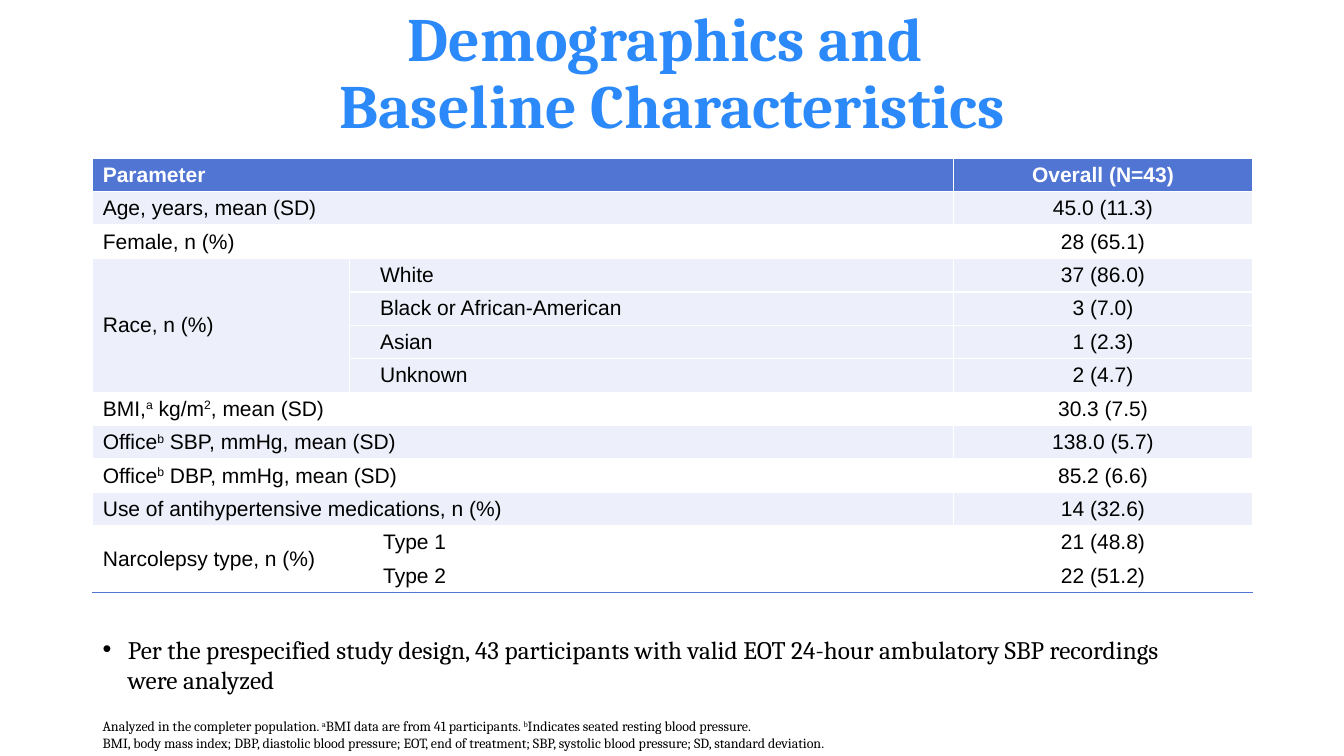
from dataclasses import dataclass

from lxml.etree import SubElement
from pptx import Presentation
from pptx.dml.color import RGBColor
from pptx.enum.text import MSO_ANCHOR, MSO_AUTO_SIZE, PP_ALIGN
from pptx.oxml.ns import qn
from pptx.util import Inches, Pt


@dataclass(frozen=True)
class Theme:
    title_blue: str = "2B89F9"
    table_blue: str = "5075D3"
    white: str = "FFFFFF"
    black: str = "000000"
    text_font: str = "Cambria"
    table_font: str = "Arial"
    title_size: float = 44
    body_size: float = 18
    table_size: float = 15
    note_size: float = 10
    band_opacity: int = 10


TITLE_LINES = ["Demographics and ", "Baseline Characteristics"]
HEADER = ("Parameter", "Overall (N=43)")
# Each group: label, indent of its levels, and (level, value) rows.
# Text between carets is superscript.
GROUPS = [
    ("Age, years, mean (SD)", 0, [("", "45.0 (11.3)")]),
    ("Female, n (%)", 0, [("", "28 (65.1)")]),
    ("Race, n (%)", 0.2, [
        ("White", "37 (86.0)"),
        ("Black or African-American", "3 (7.0)"),
        ("Asian", "1 (2.3)"),
        ("Unknown", "2 (4.7)"),
    ]),
    ("BMI,^a^ kg/m^2^, mean (SD)", 0, [("", "30.3 (7.5)")]),
    ("Office^b^ SBP, mmHg, mean (SD)", 0, [("", "138.0 (5.7)")]),
    ("Office^b^ DBP, mmHg, mean (SD)", 0, [("", "85.2 (6.6)")]),
    ("Use of antihypertensive medications, n (%)", 0, [("", "14 (32.6)")]),
    ("Narcolepsy type, n (%)", 0.23, [("Type 1", "21 (48.8)"), ("Type 2", "22 (51.2)")]),
]
FINDING = ("Per the prespecified study design, 43 participants with valid EOT 24-hour "
           "ambulatory SBP recordings were analyzed")
FOOTNOTES = [
    "Analyzed in the completer population. ^a^BMI data are from 41 participants. "
    "^b^Indicates seated resting blood pressure.",
    "BMI, body mass index; DBP, diastolic blood pressure; EOT, end of treatment; "
    "SBP, systolic blood pressure; SD, standard deviation.",
]
LEFT, WIDTH = 0.92, 11.5
COLUMN_WIDTHS = (2.55, 5.99, 2.96)
TABLE_TOP, TABLE_HEIGHT = 1.57, 4.31


class SlideBuilder:
    def __init__(self, presentation, theme):
        self.theme = theme
        self.slide = presentation.slides.add_slide(presentation.slide_layouts[5])

    def add_runs(self, paragraph, text, size, color, font, bold=False):
        """Add text run by run, raising the parts between carets."""
        for index, part in enumerate(text.split("^")):
            if not part:
                continue
            run = paragraph.add_run()
            run.text = part
            run.font.size = Pt(size)
            run.font.name = font
            run.font.bold = bold
            run.font.color.rgb = RGBColor.from_string(color)
            if index % 2:
                run._r.get_or_add_rPr().set("baseline", "30000")

    def indent(self, paragraph, left, first_line=0):
        properties = paragraph._p.get_or_add_pPr()
        properties.set("marL", str(Inches(left)))
        properties.set("indent", str(Inches(first_line)))
        return properties

    def title(self, lines, left, top, width, height):
        shape = self.slide.shapes.title
        shape.left, shape.top = Inches(left), Inches(top)
        shape.width, shape.height = Inches(width), Inches(height)
        shape.text_frame.vertical_anchor = MSO_ANCHOR.MIDDLE
        shape.text_frame.auto_size = MSO_AUTO_SIZE.NONE
        paragraph = shape.text_frame.paragraphs[0]
        paragraph.alignment = PP_ALIGN.CENTER
        paragraph.line_spacing = 0.9
        for index, line in enumerate(lines):
            if index:
                paragraph.add_line_break()
            self.add_runs(paragraph, line, self.theme.title_size, self.theme.title_blue,
                          self.theme.text_font, bold=True)

    def text(self, lines, left, top, width, height, size, bullet=False):
        shape = self.slide.shapes.add_textbox(
            Inches(left), Inches(top), Inches(width), Inches(height))
        frame = shape.text_frame
        frame.word_wrap = True
        frame.auto_size = MSO_AUTO_SIZE.SHAPE_TO_FIT_TEXT
        frame.vertical_anchor = MSO_ANCHOR.BOTTOM
        for index, line in enumerate(lines):
            paragraph = frame.add_paragraph() if index else frame.paragraphs[0]
            if bullet:
                properties = self.indent(paragraph, 0.25, -0.25)
                SubElement(properties, qn("a:buFont"), typeface=self.theme.table_font)
                SubElement(properties, qn("a:buChar"), char="•")
            self.add_runs(paragraph, line, size, self.theme.black, self.theme.text_font)

    def style_cell(self, cell, fill, opacity=100, last=False):
        """Set margins, borders and fill; the last row is closed by a thin blue rule."""
        cell.vertical_anchor = MSO_ANCHOR.MIDDLE
        cell.margin_top = cell.margin_bottom = Inches(0.04)
        properties = cell._tc.get_or_add_tcPr()
        for side in "LRTB":
            closing = last and side == "B"
            line = SubElement(properties, qn(f"a:ln{side}"), w=str(Pt(0.5 if closing else 1)))
            color = self.theme.table_blue if closing else self.theme.white
            SubElement(SubElement(line, qn("a:solidFill")), qn("a:srgbClr"), val=color)
        cell.fill.solid()
        cell.fill.fore_color.rgb = RGBColor.from_string(fill)
        if opacity < 100:
            color_element = properties.find(qn("a:solidFill")).find(qn("a:srgbClr"))
            SubElement(color_element, qn("a:alpha"), val=str(opacity * 1000))

    def cell_text(self, cell, text, header=False, centred=False, left=0):
        paragraph = cell.text_frame.paragraphs[0]
        if centred:
            paragraph.alignment = PP_ALIGN.CENTER
        if left:
            self.indent(paragraph, left)
        self.add_runs(paragraph, text, self.theme.table_size,
                      self.theme.white if header else self.theme.black,
                      self.theme.table_font, bold=header)

    def table(self, header, groups, left, top, column_widths, height):
        row_count = 1 + sum(len(levels) for _, _, levels in groups)
        table = self.slide.shapes.add_table(
            row_count, len(column_widths), Inches(left), Inches(top),
            Inches(sum(column_widths)), Inches(height)).table
        table.horz_banding = False
        for column, width in zip(table.columns, column_widths):
            column.width = Inches(width)
        for row in table.rows:
            row.height = Inches(height / row_count)

        for cell in table.rows[0].cells:
            self.style_cell(cell, self.theme.table_blue)
        table.cell(0, 0).merge(table.cell(0, 1))
        self.cell_text(table.cell(0, 0), header[0], header=True)
        self.cell_text(table.cell(0, 2), header[1], header=True, centred=True)

        start = 1
        for index, (label, level_indent, levels) in enumerate(groups):
            shaded = index % 2 == 0
            fill = self.theme.table_blue if shaded else self.theme.white
            opacity = self.theme.band_opacity if shaded else 100
            end = start + len(levels) - 1
            for row, (level, value) in enumerate(levels, start):
                for cell in table.rows[row].cells:
                    self.style_cell(cell, fill, opacity, last=end == row_count - 1 == row)
                if level:
                    self.cell_text(table.cell(row, 1), level, left=level_indent)
                self.cell_text(table.cell(row, 2), value, centred=True)
            closing = end == row_count - 1
            if closing:
                rule = table.cell(start, 0)._tc.tcPr.find(qn("a:lnB"))
                rule.set("w", str(Pt(0.5)))
                rule.find(qn("a:solidFill"))[0].set("val", self.theme.table_blue)
            table.cell(start, 0).merge(table.cell(end, 0 if len(levels) > 1 else 1))
            self.cell_text(table.cell(start, 0), label)
            start = end + 1


def main():
    presentation = Presentation()
    presentation.slide_width = Inches(13.33)
    presentation.slide_height = Inches(7.5)
    theme = Theme()
    builder = SlideBuilder(presentation, theme)
    builder.title(TITLE_LINES, LEFT, 0.02, WIDTH, 1.45)
    builder.table(HEADER, GROUPS, LEFT, TABLE_TOP, COLUMN_WIDTHS, TABLE_HEIGHT)
    builder.text(FOOTNOTES, LEFT, 7.06, WIDTH, 0.44, theme.note_size)
    builder.text([FINDING], LEFT, 6.23, 10.95, 0.71, theme.body_size, bullet=True)
    presentation.save("out.pptx")


if __name__ == "__main__":
    main()
